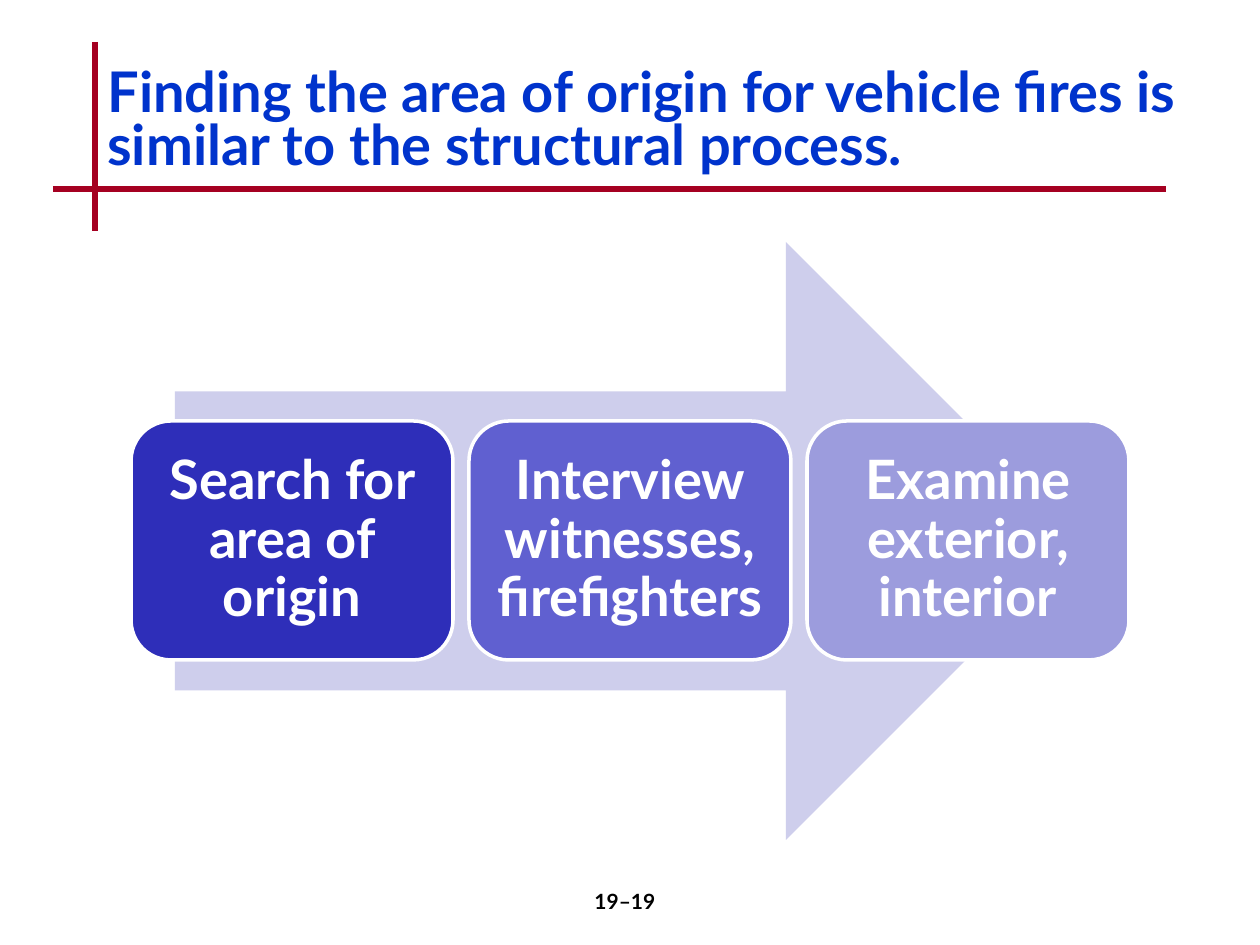
from pptx import Presentation
from pptx.dml.color import RGBColor
from pptx.enum.shapes import MSO_CONNECTOR as Link, MSO_SHAPE as Shape
from pptx.enum.text import MSO_ANCHOR as Anchor, PP_ALIGN as Align
from pptx.oxml.ns import qn
from pptx.util import Pt
from lxml.etree import SubElement

PX = 914400 / 126  # EMU in one px


def px(*lengths):
    return [round(length * PX) for length in lengths]


def write(box, text, size, color, align=Align.LEFT, anchor=Anchor.TOP,
          spacing=1.0, inset=None):
    frame = box.text_frame
    frame.word_wrap = True
    frame.vertical_anchor = anchor
    if inset is not None:
        frame.margin_left, frame.margin_top, frame.margin_right, frame.margin_bottom = px(*[inset] * 4)
    para = frame.paragraphs[0]
    para.alignment = align
    para.line_spacing = spacing
    span = para.add_run()
    span.text = text
    span.font.name = "Lato"
    span.font.size = Pt(size)
    span.font.bold = True
    span.font.color.rgb = RGBColor.from_string(color)


deck = Presentation()
deck.slide_width, deck.slide_height = px(1260, 945)
page = deck.slides.add_slide(deck.slide_layouts[6])

# Crossed rules beside and below the title
for ends in [(95, 42, 95, 231), (53, 189, 1166, 189)]:
    rule = page.shapes.add_connector(Link.STRAIGHT, *px(*ends))
    rule.line.color.rgb = RGBColor.from_string("A50021")
    rule.line.width = Pt(3)
    SubElement(rule._element.spPr, qn("a:effectLst"))

# Title and page number
title = page.shapes.add_textbox(*px(95, 63, 1176, 126))
write(title, "Finding the area of origin for vehicle fires is similar to the structural process.",
      32, "0033CC", spacing=0.8)
number = page.shapes.add_textbox(*px(494, 882, 262, 63))
write(number, "19–19", 12, "000000", align=Align.CENTER)

# Arrow behind the steps
arrow = page.shapes.add_shape(Shape.RIGHT_ARROW, *px(175, 242, 910, 598))
arrow.shadow.inherit = False
arrow.fill.solid()
arrow.fill.fore_color.rgb = RGBColor.from_string("CECEEC")
arrow.line.fill.background()

# Process steps
steps = [
    ("Search for area of origin", "2E2EB9"),
    ("Interview witnesses, firefighters", "6060D0"),
    ("Examine exterior, interior", "9C9CDD"),
]
for index, (text, color) in enumerate(steps):
    step = page.shapes.add_shape(Shape.ROUNDED_RECTANGLE, *px(131 + 338 * index, 421, 322, 239))
    step.shadow.inherit = False
    step.fill.solid()
    step.fill.fore_color.rgb = RGBColor.from_string(color)
    step.line.color.rgb = RGBColor.from_string("FFFFFF")
    step.line.width = Pt(2)
    write(step, text, 31, "FFFFFF", align=Align.CENTER, anchor=Anchor.MIDDLE,
          spacing=0.9, inset=15)

deck.save("out.pptx")
